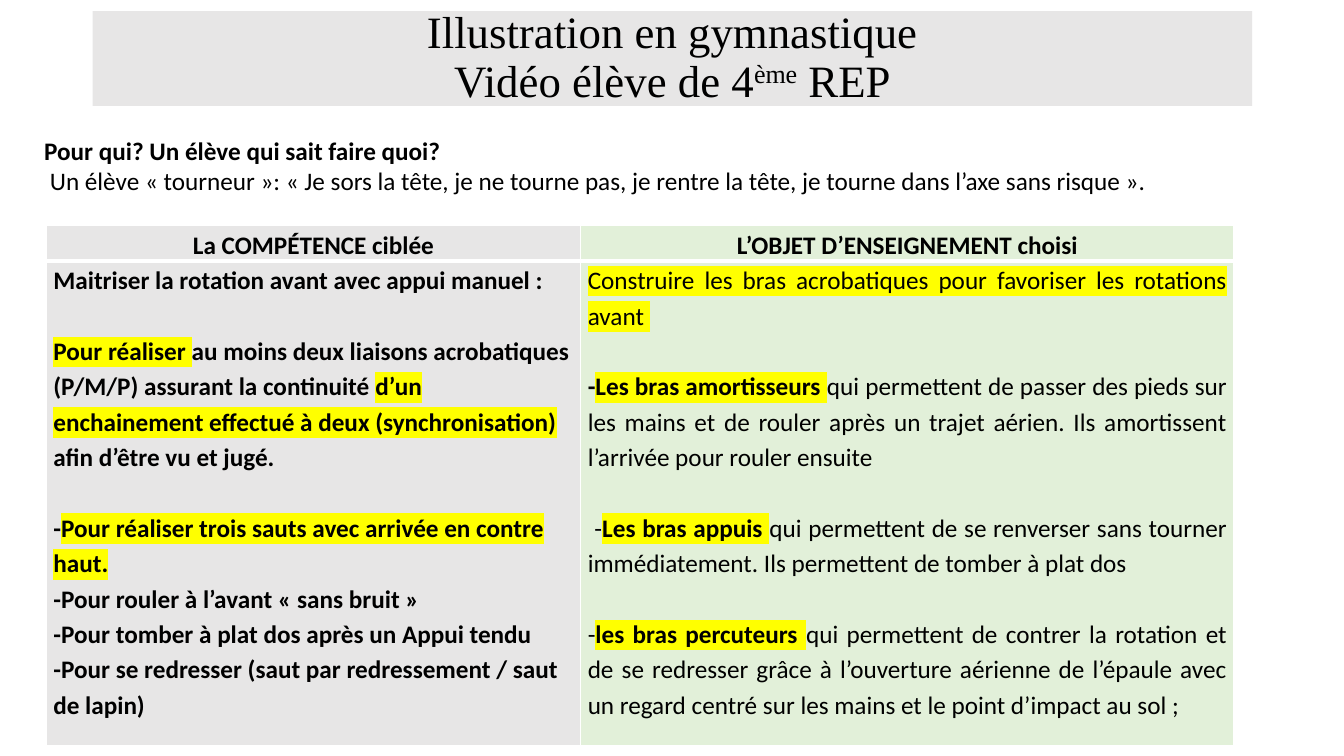
from lxml.etree import SubElement
from pptx import Presentation
from pptx.dml.color import RGBColor
from pptx.enum.text import MSO_ANCHOR as Anchor, MSO_AUTO_SIZE as AutoSize, PP_ALIGN as Align
from pptx.oxml.ns import qn
from pptx.util import Inches, Pt

BLACK = RGBColor(0, 0, 0)
WHITE = RGBColor(255, 255, 255)
GREY = RGBColor(0xE7, 0xE6, 0xE6)
GREEN = RGBColor(0xE2, 0xF0, 0xD9)
YELLOW = RGBColor(255, 255, 0)
BLANK_LINE = 25.3

HEADERS = ["La COMPÉTENCE ciblée", "L’OBJET D’ENSEIGNEMENT choisi"]
SKILL = [
    (0, [("Maitriser la rotation avant avec appui manuel :", "b")]),
    (1, [("Pour réaliser ", "bh"),
         ("au moins deux liaisons acrobatiques (P/M/P) assurant la continuité ", "b"),
         ("d’un enchainement effectué à deux (synchronisation) ", "bh"),
         ("afin d’être vu et jugé.", "b")]),
    (1, [("-", "b"), ("Pour réaliser trois sauts avec arrivée en contre haut.", "bh")]),
    (0, [("-Pour rouler à l’avant « sans bruit »", "b")]),
    (0, [("-Pour tomber à plat dos après un Appui tendu", "b")]),
    (0, [("-Pour se redresser (saut par redressement / saut de lapin)", "b")]),
]
TEACHING = [
    (0, [("Construire les bras acrobatiques pour favoriser les rotations avant ", "h")]),
    (1, [("-", "b"), ("Les bras amortisseurs ", "bh"),
         ("qui permettent de passer des pieds sur les mains et de rouler après un "
          "trajet aérien. Ils amortissent l’arrivée pour rouler ensuite", "")]),
    (1, [(" -", ""), ("Les bras appuis ", "bh"),
         ("qui permettent de se renverser sans tourner immédiatement. "
          "Ils permettent de tomber à plat dos ", "")]),
    (1, [("-", ""), ("les bras percuteurs ", "bh"),
         ("qui permettent de contrer la rotation et de se redresser grâce à l’ouverture "
          "aérienne de l’épaule avec un regard centré sur les mains et le point "
          "d’impact au sol ;", "")]),
]


def add_text(p, text, size=18, font="Calibri", bold=False, highlight=None, baseline=None):
    r = p.add_run()
    r.text = text
    r.font.size, r.font.name, r.font.bold = Pt(size), font, bold
    r.font.color.rgb = BLACK
    rPr = r.font._element
    if baseline:
        rPr.set("baseline", str(baseline * 1000))
    if highlight is not None:
        mark = SubElement(rPr, qn("a:highlight"))
        SubElement(mark, qn("a:srgbClr"), val=str(highlight))
        rPr.find(qn("a:solidFill")).addnext(mark)


class Deck:
    def __init__(self):
        self.prs = Presentation()
        self.prs.slide_width, self.prs.slide_height = Inches(13.33), Inches(7.5)
        self.s = self.prs.slides.add_slide(self.prs.slide_layouts[5])

    def x(self, percent):
        return round(self.prs.slide_width * percent / 100)

    def y(self, percent):
        return round(self.prs.slide_height * percent / 100)

    def box(self, left, top, width, height):
        return self.x(left), self.y(top), self.x(width), self.y(height)

    def fill_frame(self, tf, paragraphs, align=Align.LEFT, spacing=1.0, **style):
        for i, (gap, runs) in enumerate(paragraphs):
            p = tf.add_paragraph() if i else tf.paragraphs[0]
            p.alignment, p.line_spacing = align, spacing
            p.space_before = Pt(gap * BLANK_LINE)
            for text, flags in runs:
                add_text(p, text, bold="b" in flags,
                         highlight=YELLOW if "h" in flags else None,
                         baseline=30 if "s" in flags else None, **style)

    def title(self, area, paragraphs):
        sp = self.s.shapes.title
        sp.left, sp.top, sp.width, sp.height = self.box(*area)
        sp.fill.solid()
        sp.fill.fore_color.rgb = GREY
        tf = sp.text_frame
        tf.auto_size, tf.vertical_anchor = AutoSize.NONE, Anchor.MIDDLE
        self.fill_frame(tf, paragraphs, Align.CENTER, 0.9, size=32, font="Times New Roman")

    def text_box(self, area, paragraphs):
        sp = self.s.shapes.add_textbox(*self.box(*area))
        sp.line.color.rgb, sp.line.width = WHITE, Pt(3)
        sp.text_frame.word_wrap = True
        self.fill_frame(sp.text_frame, paragraphs)

    def cell(self, cell, paragraphs, color, align, bottom):
        cell.margin_left = cell.margin_right = Inches(0.07)
        cell.margin_top = cell.margin_bottom = 0
        self.fill_frame(cell.text_frame, paragraphs, align, 1.15)
        tcPr = cell._tc.get_or_add_tcPr()
        for side, width in zip("LRTB", (1, 1, 1, bottom)):
            ln = SubElement(tcPr, qn(f"a:ln{side}"), w=str(Pt(width)))
            SubElement(SubElement(ln, qn("a:solidFill")), qn("a:srgbClr"), val=str(WHITE))
        cell.fill.solid()
        cell.fill.fore_color.rgb = color

    def table(self, left, top, widths, heights, rows, colors, aligns):
        area = self.box(left, top, sum(widths), sum(heights))
        tbl = self.s.shapes.add_table(len(heights), len(widths), *area).table
        tbl.horz_banding = False
        for column, width in zip(tbl.columns, widths):
            column.width = self.x(width)
        for i, height in enumerate(heights):
            tbl.rows[i].height = self.y(height)
            for j, paragraphs in enumerate(rows[i]):
                self.cell(tbl.cell(i, j), paragraphs, colors[j], aligns[i][j], 1 if i else 3)


def main():
    deck = Deck()
    deck.text_box((2.55, 17.2, 89.27, 9.47), [
        (0, [("Pour qui? Un élève qui sait faire quoi?", "b")]),
        (0, [(" Un élève « tourneur »: « Je sors la tête, je ne tourne pas, je rentre la tête, "
              "je tourne dans l’axe sans risque ». ", "")]),
    ])
    deck.title((6.9, 1.47, 86.27, 12.53), [
        (0, [("Illustration en gymnastique", "")]),
        (0, [("Vidéo élève de 4", ""), ("ème", "s"), (" REP", "")]),
    ])
    header_row = [[(0, [(header, "b")])] for header in HEADERS]
    deck.table(3.45, 29.87, (39.76, 48.61), (4.67, 64.13),
               [header_row, [SKILL, TEACHING]], (GREY, GREEN),
               [(Align.CENTER, Align.CENTER), (Align.LEFT, Align.JUSTIFY)])
    deck.prs.save("out.pptx")


if __name__ == "__main__":
    main()
